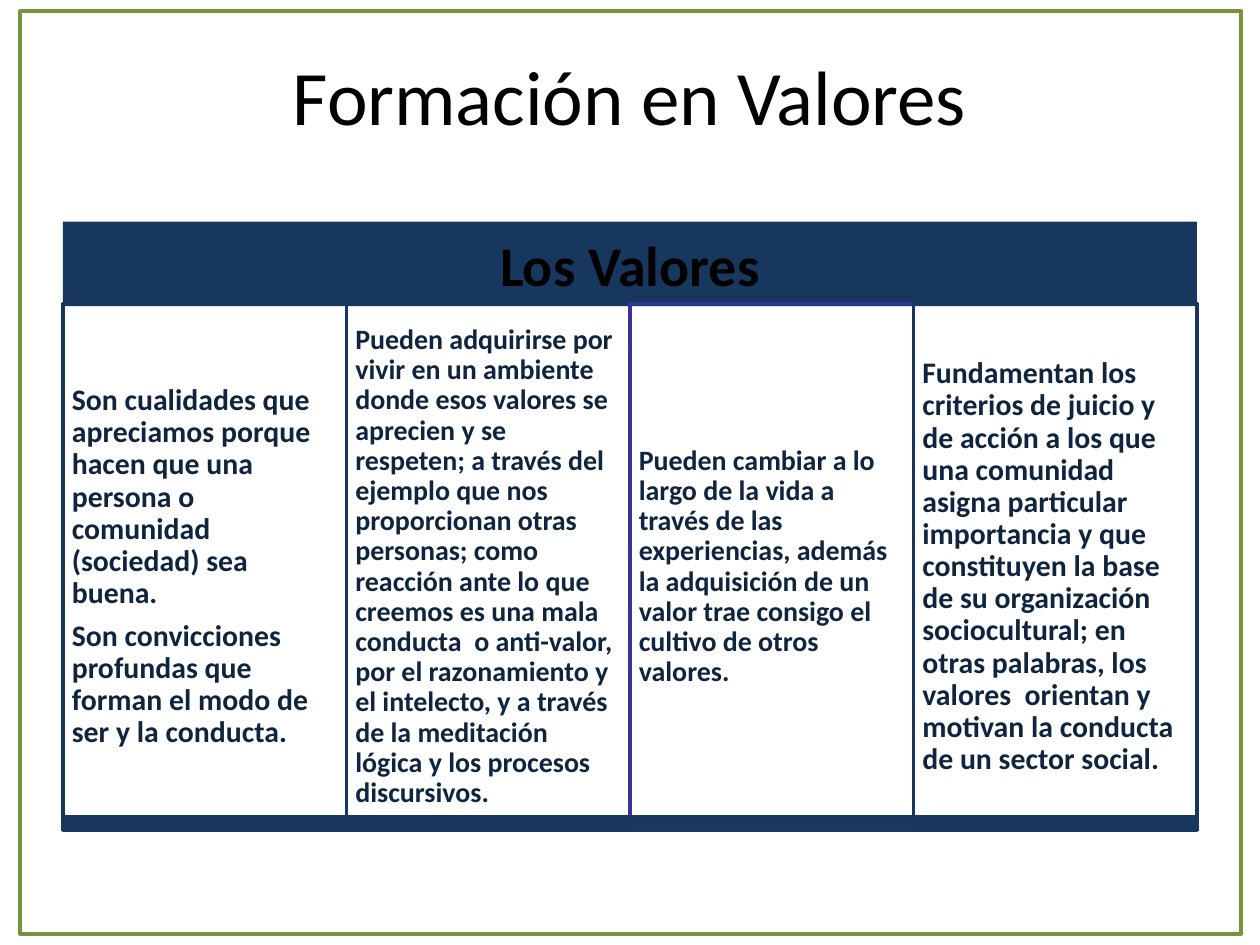
from pptx import Presentation
from pptx.dml.color import RGBColor as Rgb
from pptx.enum.shapes import MSO_SHAPE as Shape
from pptx.enum.text import MSO_ANCHOR as Anchor, PP_ALIGN as Align
from pptx.util import Inches, Pt

COLORS = {"black": "000000", "navy": "17375E", "ink": "0F243E",
          "violet": "333399", "green": "77933C"}
TITLE = "Formación en Valores"
HEAD = "Los Valores"
COLS = [
    (17, "navy", [
        "Son cualidades que apreciamos porque hacen que una persona o "
        "comunidad (sociedad) sea buena.",
        "Son convicciones profundas que forman el modo de ser y la conducta."]),
    (16, "navy", [
        "Pueden adquirirse por vivir en un ambiente donde esos valores se "
        "aprecien y se respeten; a través del ejemplo que nos proporcionan "
        "otras personas; como reacción ante lo que creemos es una mala "
        "conducta  o anti-valor, por el razonamiento y el intelecto, y a "
        "través de la meditación lógica y los procesos discursivos."]),
    (16, "violet", [
        "Pueden cambiar a lo largo de la vida a través de las experiencias, "
        "además la adquisición de un valor trae consigo el cultivo de otros "
        "valores."]),
    (17, "navy", [
        "Fundamentan los criterios de juicio y de acción a los que una "
        "comunidad asigna particular importancia y que constituyen la base "
        "de su organización sociocultural; en otras palabras, los valores  "
        "orientan y motivan la conducta de un sector social."]),
]
LEFT, WIDTH = 0.5, 9


def rgb(name):
    return Rgb.from_string(COLORS[name])


def add_rect(slide, box, fill=None, line=None, weight=2):
    rect = slide.shapes.add_shape(Shape.RECTANGLE, *map(Inches, box))
    rect.shadow.inherit = False
    if fill:
        rect.fill.solid()
        rect.fill.fore_color.rgb = rgb(fill)
    else:
        rect.fill.background()
    if line:
        rect.line.color.rgb = rgb(line)
        rect.line.width = Pt(weight)
    else:
        rect.line.fill.background()
    return rect


def set_text(shape, paras, size, color, align, anchor, pad, bold=True):
    frame = shape.text_frame
    frame.word_wrap = True
    frame.vertical_anchor = anchor
    frame.margin_left = frame.margin_right = Inches(pad)
    frame.margin_top = frame.margin_bottom = Inches(pad)
    frame.text = "\n".join(paras)
    for para in frame.paragraphs:
        para.alignment = align
        font = para.font
        font.name, font.size, font.bold = "Calibri", Pt(size), bold
        font.color.rgb = rgb(color)
        if bold:
            para.line_spacing = 0.9
            para.space_after = Pt(round(size * 0.35))


def main():
    deck = Presentation()
    deck.slide_width, deck.slide_height = Inches(10), Inches(7.5)
    slide = deck.slides.add_slide(deck.slide_layouts[6])

    title = slide.shapes.add_textbox(*map(Inches, (LEFT, 0.13, WIDTH, 1.25)))
    set_text(title, [TITLE], 44, "black", Align.CENTER, Anchor.MIDDLE, 0.05,
             bold=False)
    add_rect(slide, (0.16, 0.09, 9.69, 7.32), line="green", weight=2.25)

    head = add_rect(slide, (LEFT, 1.76, WIDTH, 0.67), fill="navy")
    set_text(head, [HEAD], 32, "black", Align.CENTER, Anchor.TOP, 0.13)

    step = WIDTH / len(COLS)
    for i, (size, line, paras) in enumerate(COLS):
        col = add_rect(slide, (LEFT + i * step, 2.41, step, 4.18), line=line)
        set_text(col, paras, size, "ink", Align.LEFT, Anchor.MIDDLE, 0.07)

    add_rect(slide, (LEFT, 6.47, WIDTH, 0.13), fill="navy")
    deck.save("out.pptx")


if __name__ == "__main__":
    main()
